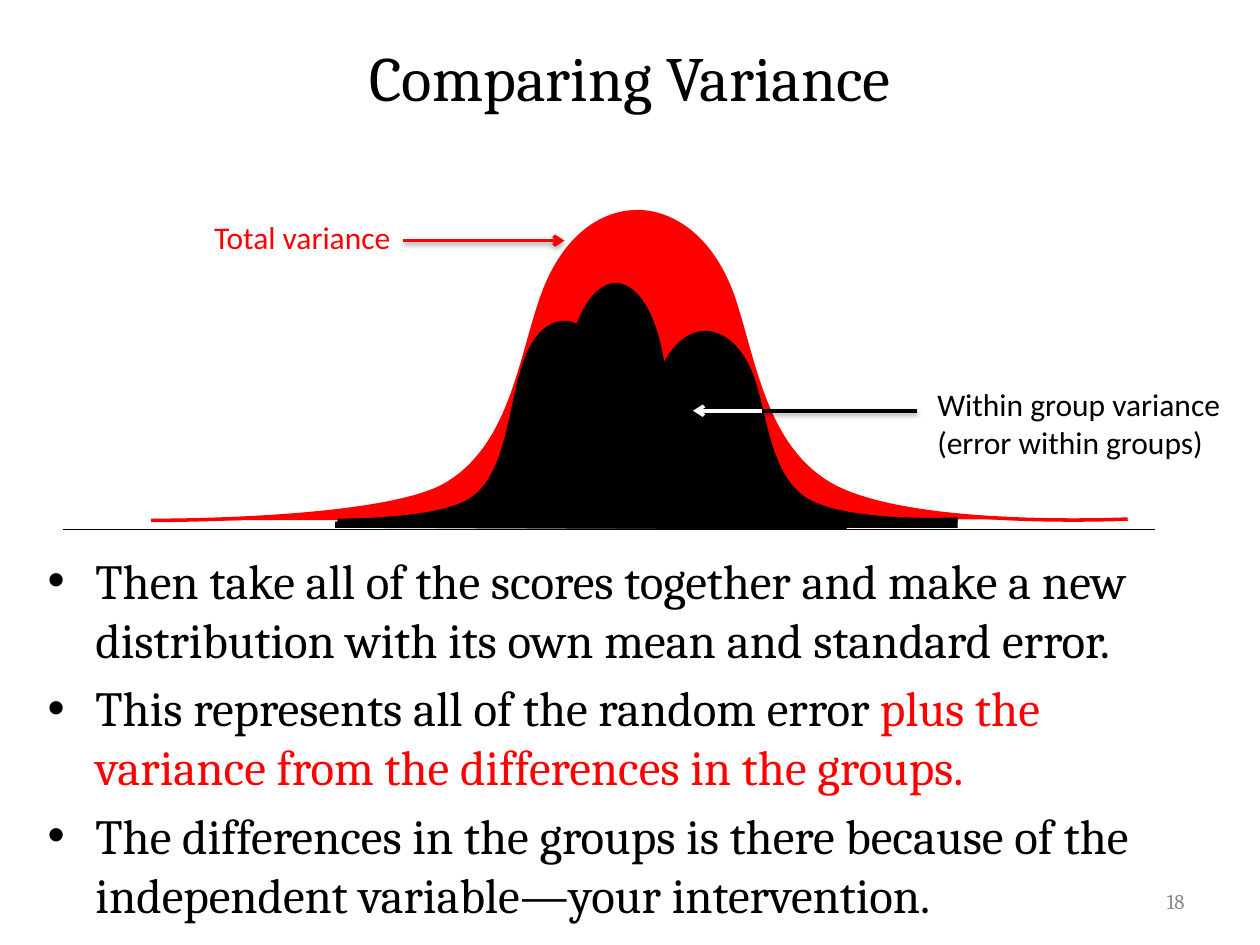
import pptx
import pptx.dml.color
import pptx.enum.shapes
import pptx.enum.text
import pptx.oxml
import pptx.oxml.ns
import pptx.util
from pptx.util import Inches

COLORS = {"black": "000000", "red": "FF0000", "white": "FFFFFF", "gray": "8C8C8C"}
ALIGN = pptx.enum.text.PP_ALIGN
ANCHOR = pptx.enum.text.MSO_ANCHOR

TOTAL_CURVE = [
    (8.95, 4.12), (8.38, 4.14), (7.12, 4.14), (6.6, 3.85), (6.07, 3.55), (5.99, 2.87),
    (5.82, 2.36), (5.64, 1.85), (5.31, 1.68), (5.06, 1.68), (4.8, 1.68), (4.48, 1.85),
    (4.3, 2.36), (4.12, 2.88), (4.05, 3.55), (3.53, 3.85), (3.01, 4.14), (1.2, 4.13),
    (1.2, 4.13)]
GROUP_CURVES = [
    [(6.3, 4.13), (6.04, 4.14), (5.45, 4.15), (5.2, 3.96), (4.96, 3.77), (4.92, 3.33),
     (4.84, 3), (4.75, 2.68), (4.6, 2.57), (4.48, 2.57), (4.36, 2.57), (4.21, 2.67),
     (4.13, 3.01), (4.04, 3.34), (4.01, 3.77), (3.76, 3.96), (3.52, 4.15), (2.68, 4.14),
     (2.68, 4.14)],
    [(6.71, 4.13), (6.44, 4.14), (5.85, 4.15), (5.61, 3.92), (5.36, 3.7), (5.32, 3.17),
     (5.24, 2.79), (5.16, 2.4), (5, 2.27), (4.89, 2.27), (4.77, 2.27), (4.62, 2.4),
     (4.53, 2.79), (4.45, 3.19), (4.41, 3.7), (4.17, 3.92), (3.93, 4.15), (3.08, 4.14),
     (3.08, 4.14)],
    [(7.6, 4.13), (7.3, 4.14), (6.66, 4.14), (6.39, 3.97), (6.12, 3.79), (6.08, 3.37),
     (5.99, 3.06), (5.9, 2.76), (5.73, 2.65), (5.6, 2.65), (5.47, 2.65), (5.31, 2.75),
     (5.21, 3.07), (5.12, 3.38), (5.08, 3.79), (4.82, 3.97), (4.55, 4.14), (3.63, 4.14),
     (3.63, 4.14)]]
GROUP_AREAS = [
    [(2.66, 4.19), (2.66, 4.14), (2.87, 4.14), (3.16, 4.12), (3.4, 4.09), (3.58, 4.05),
     (3.72, 3.99), (3.86, 3.87), (3.95, 3.69), (4.01, 3.46), (4.06, 3.26), (4.11, 3.01),
     (4.21, 2.77), (4.31, 2.64), (4.45, 2.56), (4.57, 2.59), (4.68, 2.7), (4.76, 2.83),
     (4.84, 3.07), (4.89, 3.31), (4.94, 3.49), (4.98, 3.66), (5.09, 3.86), (5.24, 4),
     (5.48, 4.09), (5.7, 4.12), (5.99, 4.15), (6.13, 4.14), (6.36, 4.14), (6.36, 4.2)],
    [(3.08, 4.19), (3.09, 4.13), (3.48, 4.13), (3.8, 4.08), (4.1, 3.99), (4.22, 3.89),
     (4.3, 3.75), (4.38, 3.57), (4.46, 3.19), (4.51, 2.9), (4.58, 2.64), (4.65, 2.47),
     (4.71, 2.36), (4.82, 2.29), (4.88, 2.27), (4.98, 2.3), (5.09, 2.39), (5.16, 2.51),
     (5.2, 2.65), (5.26, 2.86), (5.32, 3.22), (5.36, 3.4), (5.41, 3.56), (5.48, 3.75),
     (5.58, 3.9), (5.71, 4), (5.85, 4.05), (5.99, 4.09), (6.19, 4.12), (6.46, 4.13),
     (6.72, 4.13), (6.72, 4.2)],
    [(3.63, 4.19), (3.63, 4.13), (3.86, 4.13), (4.17, 4.12), (4.52, 4.07), (4.75, 4.01),
     (4.84, 3.95), (4.92, 3.89), (5, 3.77), (5.07, 3.62), (5.12, 3.4), (5.2, 3.12),
     (5.25, 2.96), (5.3, 2.84), (5.41, 2.72), (5.52, 2.66), (5.61, 2.65), (5.73, 2.68),
     (5.84, 2.77), (5.93, 2.91), (5.99, 3.05), (6.05, 3.3), (6.14, 3.59), (6.2, 3.75),
     (6.28, 3.86), (6.37, 3.96), (6.48, 4.02), (6.68, 4.08), (6.83, 4.11), (7, 4.12),
     (7.19, 4.13), (7.4, 4.13), (7.6, 4.13), (7.6, 4.19)]]


def rgb(name):
    return pptx.dml.color.RGBColor.from_string(COLORS[name])


def make_xml(tag, rest):
    return pptx.oxml.parse_xml(f"<{tag} {pptx.oxml.ns.nsdecls('a')} {rest}")


def add_run(paragraph, text, font, size, color):
    run = paragraph.add_run()
    run.text = text
    run.font.name = font
    run.font.size = pptx.util.Pt(size)
    run.font.color.rgb = rgb(color)


def add_text_frame(slide, left, top, width, height, anchor=ANCHOR.TOP):
    shape = slide.shapes.add_textbox(Inches(left), Inches(top), Inches(width), Inches(height))
    shape.text_frame.word_wrap = True
    shape.text_frame.vertical_anchor = anchor
    return shape.text_frame


def add_label(slide, box, lines, font, size, color, align=ALIGN.LEFT, anchor=ANCHOR.TOP):
    paragraph = add_text_frame(slide, *box, anchor).paragraphs[0]
    paragraph.alignment = align
    for index, line in enumerate(lines):
        if index:
            paragraph.add_line_break()
        add_run(paragraph, line, font, size, color)


def add_bullets(slide, box, bullets):
    frame = add_text_frame(slide, *box)
    for index, runs in enumerate(bullets):
        paragraph = frame.paragraphs[0] if index == 0 else frame.add_paragraph()
        paragraph.space_before = pptx.util.Pt(5.6)
        properties = paragraph._p.get_or_add_pPr()
        properties.set("marL", str(Inches(0.38)))
        properties.set("indent", str(Inches(-0.38)))
        properties.append(make_xml("a:buFont", 'typeface="Arial"/>'))
        properties.append(make_xml("a:buChar", 'char="•"/>'))
        for text, color in runs:
            add_run(paragraph, text, "Cambria", 28, color)


def add_freeform(slide, points, fill=None, line=None):
    corners = [(Inches(x), Inches(y)) for x, y in points]
    builder = slide.shapes.build_freeform(*corners[0], scale=1.0)
    builder.add_line_segments(corners[1:], close=False)
    shape = builder.convert_to_shape()
    shape.shadow.inherit = False
    if fill:
        shape.fill.solid()
        shape.fill.fore_color.rgb = rgb(fill)
    else:
        shape.fill.background()
    if line:
        shape.line.color.rgb = rgb(line)
        shape.line.width = pptx.util.Pt(2)
    else:
        shape.line.fill.background()
    return shape


def add_curve(slide, controls, color, fill=None):
    shape = add_freeform(slide, controls[::3], fill, color)
    segments = list(shape._element.iter(pptx.oxml.ns.qn("a:lnTo")))
    for index, segment in enumerate(segments):
        points = "".join(f'<a:pt x="{Inches(x) - shape.left}" y="{Inches(y) - shape.top}"/>'
                         for x, y in controls[3 * index + 1:3 * index + 4])
        segment.getparent().replace(segment, make_xml("a:cubicBezTo", f">{points}</a:cubicBezTo>"))


def add_line(slide, start, end, y, color, width=2, arrow=False, shadow=False):
    connector = slide.shapes.add_connector(
        pptx.enum.shapes.MSO_CONNECTOR.STRAIGHT, Inches(start), Inches(y), Inches(end), Inches(y))
    connector.line.color.rgb = rgb(color)
    connector.line.width = pptx.util.Pt(width)
    if arrow:
        connector.line._get_or_add_ln().append(make_xml("a:tailEnd", 'type="arrow"/>'))
    effect = (f'<a:outerShdw blurRad="{pptx.util.Pt(3.1)}" dist="{pptx.util.Pt(1.6)}" dir="5400000" '
              f'rotWithShape="0"><a:srgbClr val="{COLORS["black"]}"><a:alpha val="38000"/>'
              '</a:srgbClr></a:outerShdw>') if shadow else ""
    connector._element.spPr.append(make_xml("a:effectLst", f">{effect}</a:effectLst>"))


def add_group_curves(slide, rise=0):
    for curve in GROUP_CURVES:
        add_curve(slide, [(x, y - rise) for x, y in curve], "black")


def add_variance_diagram(slide):
    add_curve(slide, TOTAL_CURVE, "red", fill="red")
    add_group_curves(slide, rise=0.01)
    add_label(slide, (1.6, 1.68, 2.28, 0.4), ["Total variance"], "Calibri", 18, "red")
    add_line(slide, 3.2, 4.48, 1.91, "red", arrow=True, shadow=True)
    add_line(slide, 0.5, 9.17, 4.2, "black", width=0.75)
    add_group_curves(slide)
    for area in GROUP_AREAS:
        add_freeform(slide, area, fill="black")
    add_label(slide, (7.34, 3.01, 2.51, 0.71),
              ["Within group variance", "(error within groups)"], "Calibri", 18, "black")
    add_line(slide, 7.28, 6.04, 3.26, "black", shadow=True)
    add_line(slide, 6.05, 5.5, 3.26, "white", arrow=True, shadow=True)


def main():
    presentation = pptx.Presentation()
    presentation.slide_width = Inches(10)
    presentation.slide_height = Inches(7.5)
    slide = presentation.slides.add_slide(presentation.slide_layouts[6])
    add_label(slide, (0.75, 0.11, 8.5, 1), ["Comparing Variance"], "Cambria", 36, "black",
              ALIGN.CENTER, ANCHOR.MIDDLE)
    add_bullets(slide, (0.28, 4.32, 9.33, 3.86), [
        [("Then take all of the scores together and make a new distribution "
          "with its own mean and standard error.", "black")],
        [("This represents all of the random error ", "black"),
         ("plus the variance from the differences in the groups.", "red")],
        [("The differences in the groups is there because of the independent "
          "variable—your intervention.", "black")]])
    add_variance_diagram(slide)
    add_label(slide, (7.17, 6.95, 2.33, 0.4), ["18"], "Cambria", 12, "gray",
              ALIGN.RIGHT, ANCHOR.MIDDLE)
    presentation.save("out.pptx")


if __name__ == "__main__":
    main()
